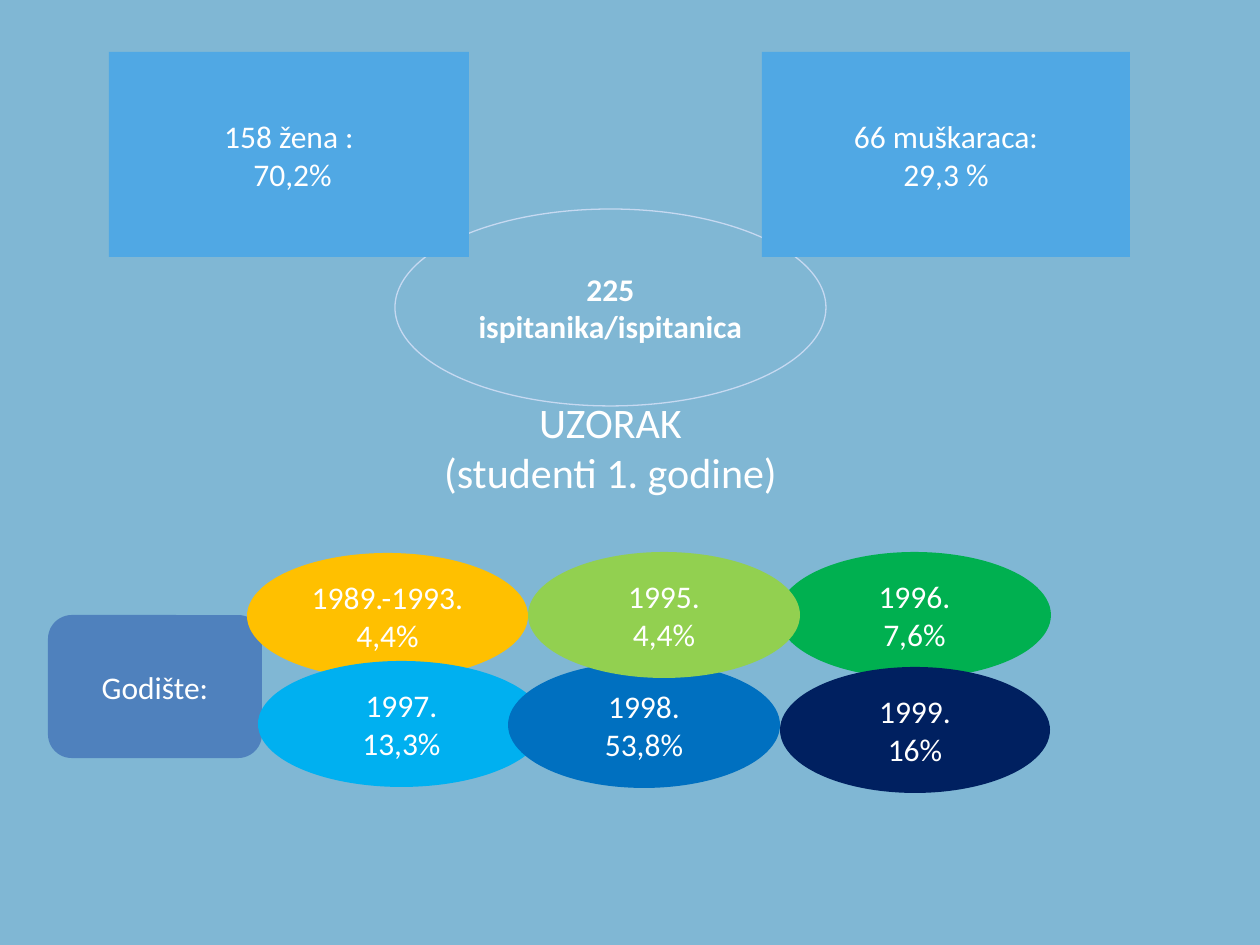
from pptx import Presentation
from pptx.dml.color import RGBColor
from pptx.enum.shapes import MSO_SHAPE
from pptx.enum.text import MSO_ANCHOR, PP_ALIGN
from pptx.util import Pt

EMU_PER_PX = 914400 / 126
FONT = "Calibri"

WHITE = RGBColor(0xFF, 0xFF, 0xFF)
BACKGROUND = RGBColor(0x80, 0xB7, 0xD4)
OUTLINE = RGBColor(0xC6, 0xD9, 0xF1)
GENDER_BLUE = RGBColor(0x50, 0xA8, 0xE4)
LABEL_BLUE = RGBColor(0x4F, 0x81, 0xBD)
AMBER = RGBColor(0xFF, 0xC0, 0x00)
SKY = RGBColor(0x00, 0xB0, 0xF0)
BLUE = RGBColor(0x00, 0x70, 0xC0)
GREEN = RGBColor(0x00, 0xB0, 0x50)
LIME = RGBColor(0x92, 0xD0, 0x50)
NAVY = RGBColor(0x00, 0x20, 0x60)

BIRTH_YEAR_HEIGHT = 126
# left, top, width, fill, text; from back to front
BIRTH_YEARS = [
    (247, 553, 281, AMBER, "1989.-1993.\n4,4%"),
    (258, 661, 287, SKY, "1997.\n13,3%"),
    (508, 662, 272, BLUE, "1998.\n53,8%"),
    (778, 552, 273, GREEN, "1996.\n7,6%"),
    (528, 552, 272, LIME, "1995.\n4,4%"),
    (780, 667, 270, NAVY, "1999.\n16%"),
]


def px(length):
    return round(length * EMU_PER_PX)


def add_labelled_shape(slide, kind, box, fill, text, size=18, bold=False, line=None):
    shape = slide.shapes.add_shape(kind, *map(px, box))
    shape.shadow.inherit = False
    shape.fill.solid()
    shape.fill.fore_color.rgb = fill
    if line is None:
        shape.line.fill.background()
    else:
        shape.line.color.rgb = line
        shape.line.width = Pt(0.75)

    text_frame = shape.text_frame
    text_frame.word_wrap = True
    text_frame.vertical_anchor = MSO_ANCHOR.MIDDLE
    text_frame.text = text
    for paragraph in text_frame.paragraphs:
        paragraph.alignment = PP_ALIGN.CENTER
        for run in paragraph.runs:
            run.font.name = FONT
            run.font.size = Pt(size)
            run.font.bold = bold
            run.font.color.rgb = WHITE


def add_sample(slide):
    add_labelled_shape(slide, MSO_SHAPE.RECTANGLE, (395, 303, 431, 288), BACKGROUND,
                       "UZORAK\n(studenti 1. godine)", size=24)
    add_labelled_shape(slide, MSO_SHAPE.OVAL, (395, 209, 431, 197), BACKGROUND,
                       "225 ispitanika/ispitanica", bold=True, line=OUTLINE)


def add_genders(slide):
    for left, width, text in [(109, 360, "158 žena :\n 70,2%"),
                              (762, 368, "66 muškaraca:\n29,3 %")]:
        add_labelled_shape(slide, MSO_SHAPE.RECTANGLE, (left, 52, width, 205),
                           GENDER_BLUE, text)


def add_birth_years(slide):
    add_labelled_shape(slide, MSO_SHAPE.ROUNDED_RECTANGLE, (48, 615, 214, 143),
                       LABEL_BLUE, "Godište:")
    for left, top, width, fill, text in BIRTH_YEARS:
        add_labelled_shape(slide, MSO_SHAPE.OVAL,
                           (left, top, width, BIRTH_YEAR_HEIGHT), fill, text)


def main():
    presentation = Presentation()
    presentation.slide_width = px(1260)
    presentation.slide_height = px(945)
    slide = presentation.slides.add_slide(presentation.slide_layouts[6])
    slide.background.fill.solid()
    slide.background.fill.fore_color.rgb = BACKGROUND

    # Sample size and its split by gender
    add_sample(slide)
    add_genders(slide)

    # Years of birth
    add_birth_years(slide)
    presentation.save("out.pptx")


if __name__ == "__main__":
    main()
